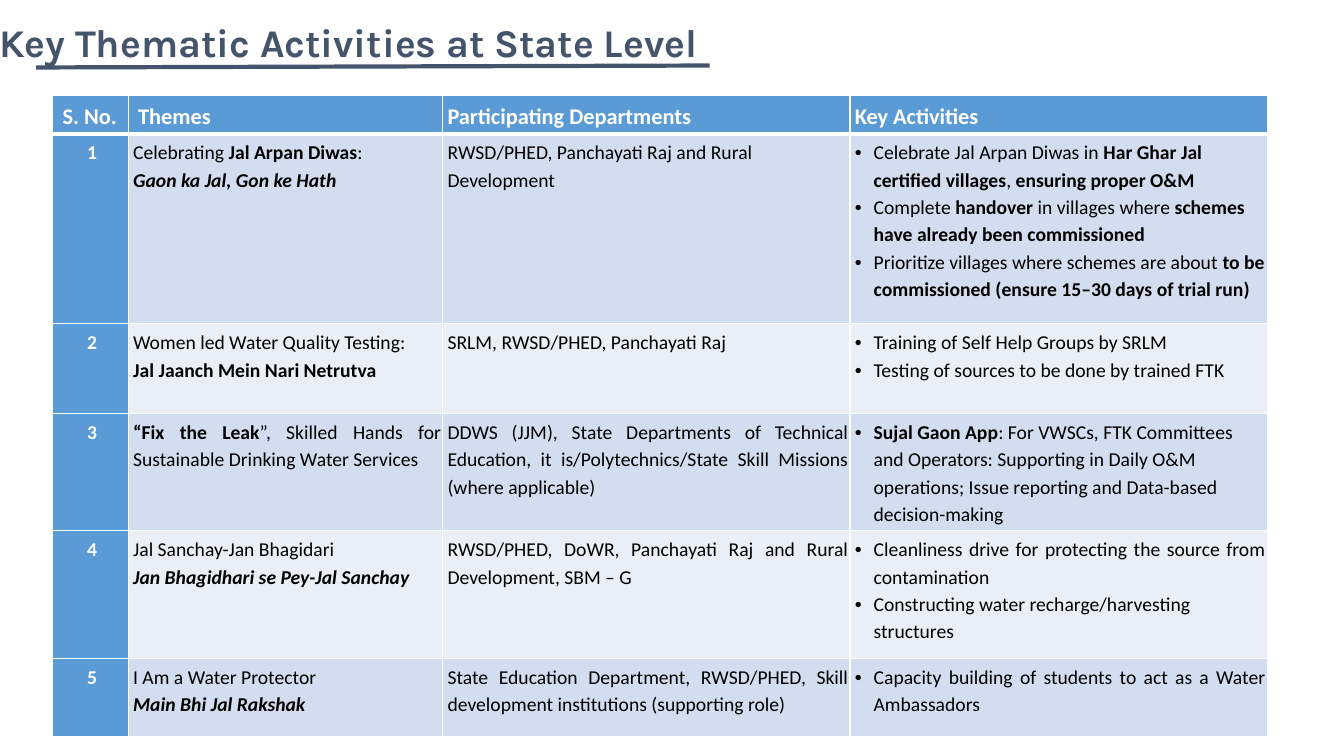
from dataclasses import dataclass

from pptx import Presentation, util as u
from pptx.dml.color import RGBColor
from pptx.enum import shapes, text
from pptx.oxml import parse_xml
from pptx.oxml.ns import nsdecls


@dataclass(frozen=True)
class Theme:
    """Colours, fonts and type sizes of the slide."""
    ink: str = "000000"
    white: str = "FFFFFF"
    slate: str = "44546A"
    blue: str = "5B9BD5"
    bands: tuple = ("D2DEEF", "EAEFF7")
    body: str = "Calibri"
    display: str = "Karla"
    title: int = 28
    head: int = 16
    cell: int = 14
    lead: float = 1.15


LEFT, MID, JUST = text.PP_ALIGN.LEFT, text.PP_ALIGN.CENTER, text.PP_ALIGN.JUSTIFY
COLS = (54, 224.6, 290.9, 298.1)
ROWS = (27.1, 135.8, 64.2, 83.6, 91.4, 56)
HEADS = ("\u00a0S. No.".replace("\u00a0", " "), " Themes", "Participating Departments", "Key Activities")
THEMES = (
    (("Celebrating *Jal Arpan Diwas*:", "~Gaon ka Jal, Gon ke Hath"),
     ("RWSD/PHED, Panchayati Raj and Rural Development",),
     ("Celebrate Jal Arpan Diwas in *Har Ghar Jal certified villages*, *ensuring proper O&M*",
      "Complete *handover* in villages where *schemes have already been commissioned*",
      "Prioritize villages where schemes are about "
      "*to be commissioned (ensure 15–30 days of trial run)*")),
    (("=Women led Water Quality Testing:", "=*Jal Jaanch Mein Nari Netrutva*"),
     ("=SRLM, RWSD/PHED, Panchayati Raj",),
     ("Training of Self Help Groups by SRLM",
      "Testing of sources to be done by trained FTK")),
    (("=*“Fix the Leak*”, Skilled Hands for Sustainable Drinking Water Services",),
     ("=DDWS (JJM), State Departments of Technical Education, "
      "it is/Polytechnics/State Skill Missions (where applicable)",),
     ("*Sujal Gaon App*: For VWSCs, FTK Committees and Operators: Supporting in Daily "
      "O&M operations; Issue reporting and Data-based decision-making",)),
    (("Jal Sanchay-Jan Bhagidari", "~Jan Bhagidhari se Pey-Jal Sanchay"),
     ("=RWSD/PHED, DoWR, Panchayati Raj and Rural Development, SBM – G",),
     ("=Cleanliness drive for protecting the source from contamination",
      "Constructing water recharge/harvesting structures")),
    (("I Am a Water Protector", "~Main Bhi Jal Rakshak"),
     ("=State Education Department, RWSD/PHED, Skill development institutions (supporting role)",),
     ("=Capacity building of students to act as a Water Ambassadors",)),
)


class Deck:
    """Holds the theme and the current slide, and draws each kind of element."""

    def __init__(self, theme):
        self.theme = theme
        self.prs = Presentation()
        self.prs.slide_width, self.prs.slide_height = u.Pt(960), u.Pt(540)
        self.slide = self.prs.slides.add_slide(self.prs.slide_layouts[6])

    def style(self, run, size, tint, bold=False, slant=False, face=None):
        font = run.font
        font.name, font.size = face or self.theme.body, u.Pt(size)
        font.bold, font.italic = bold, slant
        font.color.rgb = RGBColor.from_string(tint)

    def title(self, words, x, y, w, h):
        frame = self.slide.shapes.add_textbox(*map(u.Pt, (x, y, w, h))).text_frame
        frame.word_wrap = True
        para = frame.paragraphs[0]
        para.text, para.alignment = words, MID
        para.line_spacing = self.theme.lead
        self.style(para.runs[0], self.theme.title, self.theme.slate, True, face=self.theme.display)

    def line(self, *ends):
        link = self.slide.shapes.add_connector(shapes.MSO_CONNECTOR.STRAIGHT, *map(u.Pt, ends))
        link.line.width = u.Pt(3)
        link.line.color.rgb = RGBColor.from_string(self.theme.slate)
        link._element.spPr.append(parse_xml(f"<a:effectLst {nsdecls('a')}/>"))

    def table(self, x, y, cols, rows):
        size = (x, y, sum(cols), sum(rows))
        grid = self.slide.shapes.add_table(len(rows), len(cols), *map(u.Pt, size)).table
        for col, width in zip(grid.columns, cols):
            col.width = u.Pt(width)
        for row, height in zip(grid.rows, rows):
            row.height = u.Pt(height)
        return grid

    def edge(self, cell, head):
        props = cell._tc.get_or_add_tcPr()
        for side in "LRTB":
            width = u.Pt(3 if head and side == "B" else 1)
            props.append(parse_xml(
                f'<a:ln{side} {nsdecls("a")} w="{width}"><a:solidFill>'
                f'<a:srgbClr val="{self.theme.white}"/></a:solidFill></a:ln{side}>'))

    def bullet(self, para):
        props = para._p.get_or_add_pPr()
        props.set("marL", str(u.Pt(13.5)))
        props.set("indent", str(u.Pt(-13.5)))
        props.append(parse_xml(f'<a:buFont {nsdecls("a")} typeface="Arial"/>'))
        props.append(parse_xml(f'<a:buChar {nsdecls("a")} char="•"/>'))

    def cell(self, cell, lines, fill, tint, align=LEFT, head=False, bold=False, dots=False):
        self.edge(cell, head)
        cell.fill.solid()
        cell.fill.fore_color.rgb = RGBColor.from_string(fill)
        cell.margin_left, cell.margin_right = u.Pt(3.4), u.Pt(1.2)
        cell.margin_top = cell.margin_bottom = u.Pt(2.6)
        cell.vertical_anchor = text.MSO_ANCHOR.MIDDLE if head else text.MSO_ANCHOR.TOP
        size = self.theme.head if head else self.theme.cell
        frame = cell.text_frame
        for n, words in enumerate(lines):
            para = frame.add_paragraph() if n else frame.paragraphs[0]
            para.alignment = JUST if words.startswith("=") else align
            para.line_spacing = self.theme.lead
            if dots:
                self.bullet(para)
            slant = words.startswith("~")
            for k, part in enumerate(words.lstrip("=~").split("*")):
                if part:
                    run = para.add_run()
                    run.text = part
                    self.style(run, size, tint, bold or slant or k % 2 == 1, slant)


def main():
    look = Theme()
    deck = Deck(look)
    grid = deck.table(37.7, 67.9, COLS, ROWS)
    for c, words in enumerate(HEADS):
        deck.cell(grid.cell(0, c), (words,), look.blue, look.white, head=True, bold=True)
    for r, theme in enumerate(THEMES, 1):
        deck.cell(grid.cell(r, 0), (str(r),), look.blue, look.white, MID, bold=True)
        for c, lines in enumerate(theme, 1):
            deck.cell(grid.cell(r, c), lines, look.bands[(r - 1) % 2], look.ink, dots=c == 3)
    deck.title("Key Thematic Activities at State Level", -9.4, 4.3, 516.2, 43.9)
    deck.line(25.9, 48.2, 506.9, 46.8)
    deck.prs.save("out.pptx")


if __name__ == "__main__":
    main()
